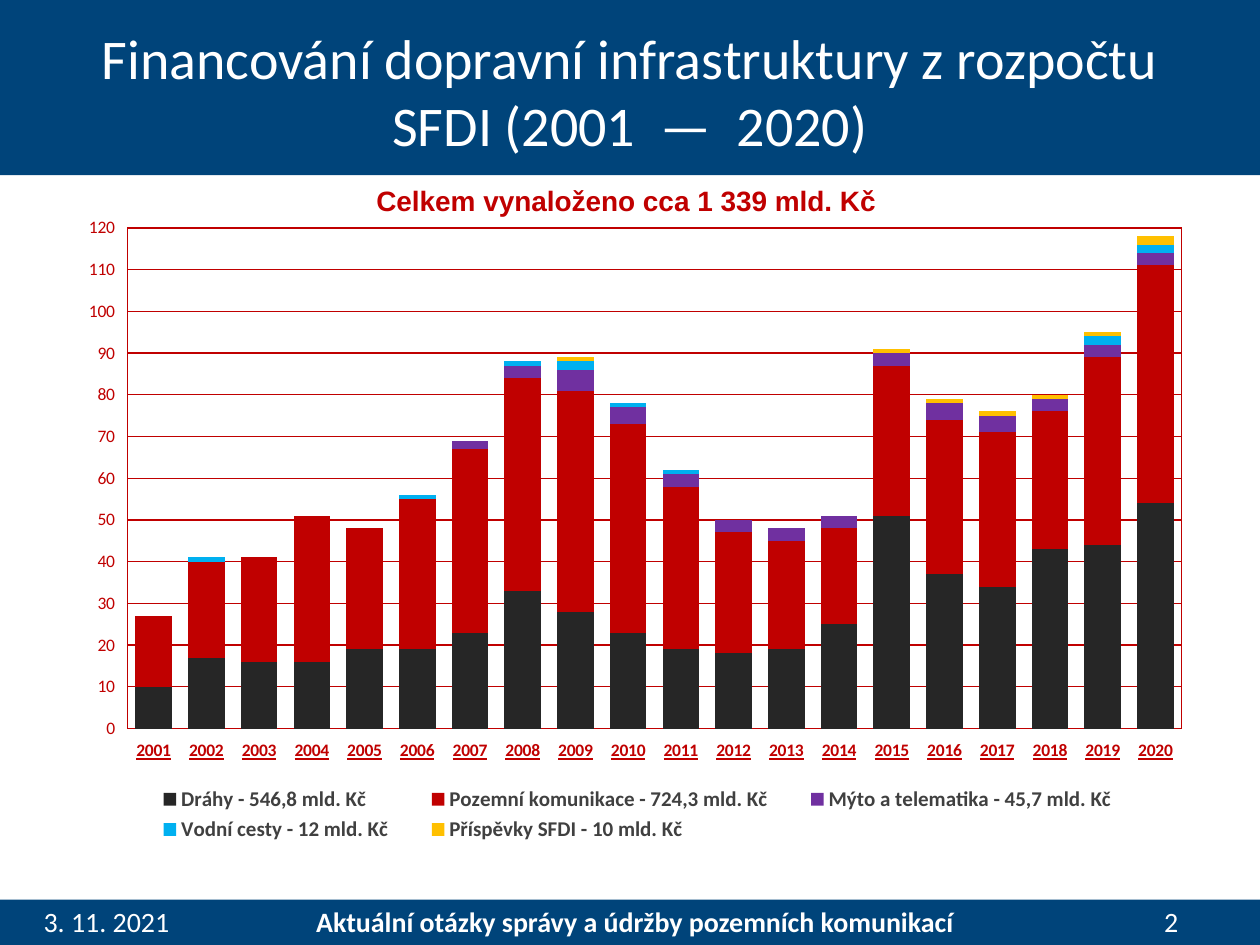
from dataclasses import dataclass

from lxml import etree
from pptx import Presentation, util as u
from pptx.chart.data import CategoryChartData
from pptx.dml.color import RGBColor
from pptx.enum import chart as ch, shapes, text
from pptx.oxml.ns import qn


@dataclass(frozen=True)
class Theme:
    navy: str = "00447A"
    white: str = "FFFFFF"
    red: str = "C00000"
    gray: str = "404040"
    body: str = "Calibri"
    accent: str = "Arial"
    title: int = 32
    label: int = 16
    legend: int = 12
    axis: int = 10


THEME = Theme()
WIDTH, HEIGHT = 10, 7.5
TITLE = "Financování dopravní infrastruktury z rozpočtu SFDI (2001  —  2020)"
SUBTITLE = "Celkem vynaloženo cca 1 339 mld. Kč"
BANDS = [(0, 0, WIDTH, 1.39), (0, 7.14, WIDTH, 0.36)]
FOOTER = [
    ("Aktuální otázky správy a údržby pozemních komunikací", (1.3, 7.13, 7.48, 0.37), True),
    ("3. 11. 2021", (0, 7.13, 1.69, 0.37), False),
    ("2", (8.59, 7.13, 1.41, 0.37), False),
]
YEARS = [str(year) for year in range(2001, 2021)]
SERIES = [
    ("Dráhy - 546,8 mld. Kč", "262626",
     (10, 17, 16, 16, 19, 19, 23, 33, 28, 23, 19, 18, 19, 25, 51, 37, 34, 43, 44, 54)),
    ("Pozemní komunikace - 724,3 mld. Kč", "C00000",
     (17, 23, 25, 35, 29, 36, 44, 51, 53, 50, 39, 29, 26, 23, 36, 37, 37, 33, 45, 57)),
    ("Mýto a telematika - 45,7 mld. Kč", "7030A0",
     (0, 0, 0, 0, 0, 0, 2, 3, 5, 4, 3, 3, 3, 3, 3, 4, 4, 3, 3, 3)),
    ("Vodní cesty - 12 mld. Kč", "00B0F0",
     (0, 1, 0, 0, 0, 1, 0, 1, 2, 1, 1, 0, 0, 0, 0, 0, 0, 0, 2, 2)),
    ("Příspěvky SFDI - 10 mld. Kč", "FFC000",
     (0, 0, 0, 0, 0, 0, 0, 0, 1, 0, 0, 0, 0, 0, 1, 1, 1, 1, 1, 2)),
]


def inches(area):
    return [u.Inches(value) for value in area]


def style(font, size, color, bold=False, name=THEME.body):
    font.size, font.bold, font.name = u.Pt(size), bold, name
    font.color.rgb = RGBColor.from_string(color)


def write(box, words, size=THEME.label, color=THEME.white, bold=False, name=THEME.body,
          anchor=text.MSO_ANCHOR.TOP):
    frame = box.text_frame
    frame.word_wrap = True
    frame.vertical_anchor = anchor
    para = frame.paragraphs[0]
    para.alignment = text.PP_ALIGN.CENTER
    span = para.add_run()
    span.text = words
    style(span.font, size, color, bold, name)


def set_layout(parent, position, area, inner=False):
    for old in parent.findall(qn("c:layout")):
        parent.remove(old)
    layout = etree.Element(qn("c:layout"))
    parent.insert(position, layout)
    manual = etree.SubElement(layout, qn("c:manualLayout"))
    fields = [("layoutTarget", "inner")] if inner else []
    fields += [("xMode", "edge"), ("yMode", "edge")]
    fields += zip("xywh", map(str, area))
    for tag, value in fields:
        etree.SubElement(manual, qn("c:" + tag)).set("val", value)


def outline_plot(plot_area):
    props = etree.SubElement(plot_area, qn("c:spPr"))
    etree.SubElement(props, qn("a:noFill"))
    line = etree.SubElement(props, qn("a:ln"), w=str(u.Pt(0.75)))
    fill = etree.SubElement(line, qn("a:solidFill"))
    etree.SubElement(fill, qn("a:srgbClr"), val=THEME.red)


def add_budget_chart(page):
    data = CategoryChartData(number_format="#,##0")
    data.categories = YEARS
    for name, _, values in SERIES:
        data.add_series(name, values)
    chart = page.shapes.add_chart(
        ch.XL_CHART_TYPE.COLUMN_STACKED, *inches((0.47, 1.6, 9, 5.23)), data).chart
    chart.has_title = False
    style(chart.font, THEME.axis, "000000")

    plot = chart.plots[0]
    plot.gap_width, plot.overlap, plot.vary_by_categories = 44, 100, False
    for series, (_, color, _) in zip(plot.series, SERIES):
        series.format.fill.solid()
        series.format.fill.fore_color.rgb = RGBColor.from_string(color)

    for axis, bold in ((chart.category_axis, True), (chart.value_axis, False)):
        style(axis.tick_labels.font, THEME.axis, THEME.red, bold)
        axis.tick_labels.font.underline = bold
        axis.major_tick_mark = ch.XL_TICK_MARK.OUTSIDE
        axis.format.line.fill.background()
    scale = chart.value_axis
    scale.minimum_scale, scale.maximum_scale, scale.major_unit = 0, 120, 10
    scale.tick_labels.number_format = "#,##0"
    scale.tick_labels.number_format_is_linked = False
    scale.has_major_gridlines = True
    grid = scale.major_gridlines.format.line
    grid.width = u.Pt(0.75)
    grid.color.rgb = RGBColor.from_string(THEME.red)

    chart.has_legend = True
    legend = chart.legend
    legend.position = ch.XL_LEGEND_POSITION.BOTTOM
    legend.include_in_layout = False
    style(legend.font, THEME.legend, THEME.gray, True)
    set_layout(legend._element, 1, (0.06, 0.88, 0.9, 0.1))
    plot_area = chart._chartSpace.chart.plotArea
    set_layout(plot_area, 0, (0.06, 0.04, 0.93, 0.76), inner=True)
    outline_plot(plot_area)


def main():
    deck = Presentation()
    deck.slide_width, deck.slide_height = inches((WIDTH, HEIGHT))
    page = deck.slides.add_slide(deck.slide_layouts[5])
    for area in BANDS:
        band = page.shapes.add_shape(shapes.MSO_SHAPE.RECTANGLE, *inches(area))
        band.shadow.inherit = False
        band.fill.solid()
        band.fill.fore_color.rgb = RGBColor.from_string(THEME.navy)
        band.line.fill.background()
    for words, area, bold in FOOTER:
        write(page.shapes.add_textbox(*inches(area)), words, bold=bold)

    title = page.shapes.title
    title.left, title.top, title.width, title.height = inches((0.5, 0.21, 9, 1.02))
    write(title, TITLE, size=THEME.title, anchor=text.MSO_ANCHOR.MIDDLE)
    page.shapes._spTree.append(title._element)

    add_budget_chart(page)
    write(page.shapes.add_textbox(*inches((2.49, 1.41, 4.96, 0.37))), SUBTITLE,
          color=THEME.red, bold=True, name=THEME.accent)
    deck.save("out.pptx")


if __name__ == "__main__":
    main()
